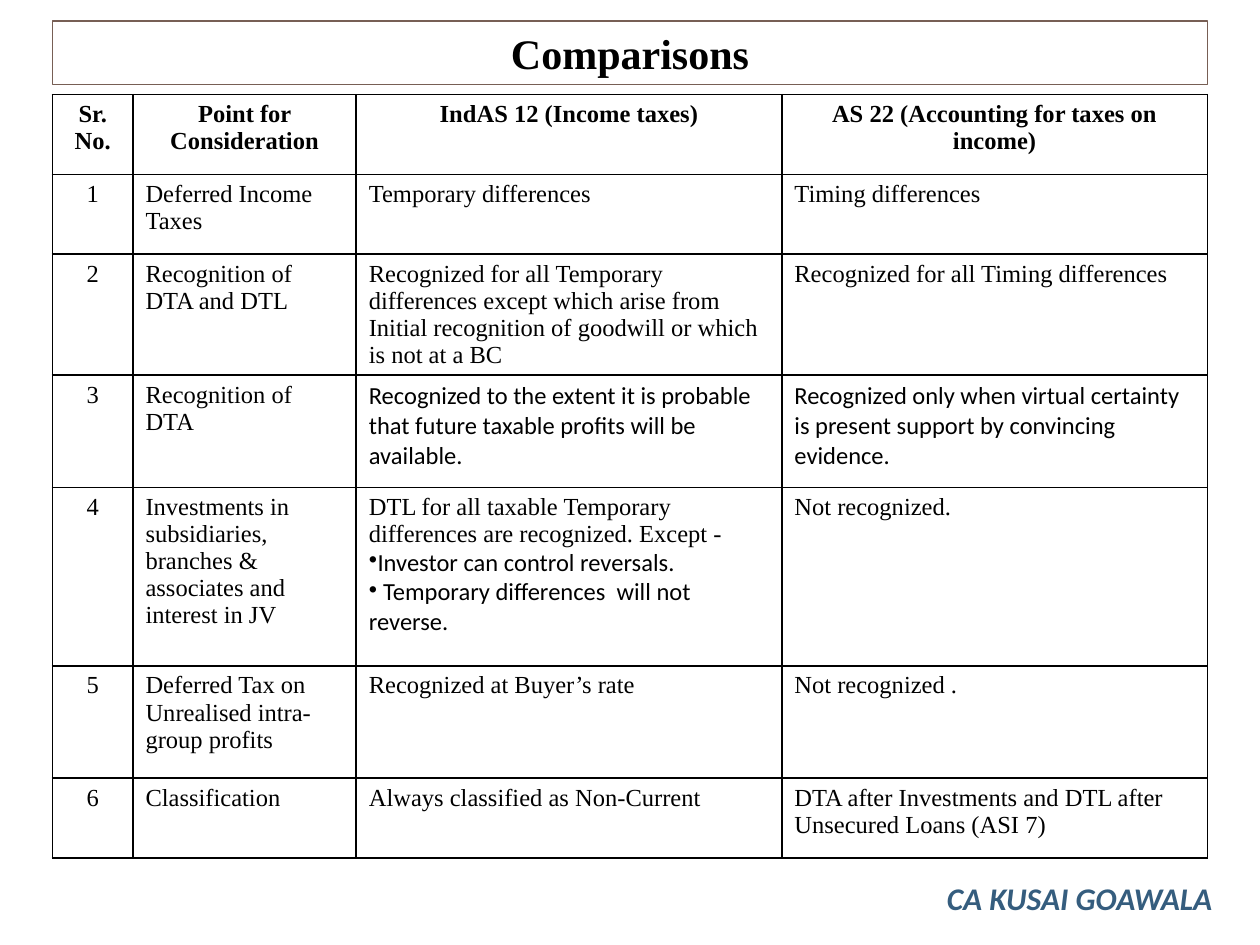
from lxml import etree
from pptx import Presentation
from pptx.dml.color import RGBColor
from pptx.enum.shapes import MSO_SHAPE
from pptx.enum.text import MSO_ANCHOR, MSO_AUTO_SIZE, PP_ALIGN
from pptx.oxml.ns import qn
from pptx.util import Pt

RECTANGLE = MSO_SHAPE.RECTANGLE
LEFT, CENTER = PP_ALIGN.LEFT, PP_ALIGN.CENTER
MIDDLE = MSO_ANCHOR.MIDDLE
GROW = MSO_AUTO_SIZE.SHAPE_TO_FIT_TEXT

COLORS = {"ink": "000000", "frame": "775F55", "author": "355D7E"}
SERIF, SANS = "Times New Roman", "Calibri"
BULLET = "•"

COLUMN_WIDTHS = [46, 127.6, 243.2, 243.2]
ROW_HEIGHTS = [45.6, 45.6, 64.2, 64.2, 102, 64.2, 45.6]
HEADINGS = ["Sr. No.", "Point for Consideration", "IndAS 12 (Income taxes)",
            "AS 22 (Accounting for taxes on income)"]
COMPARISONS = [
    ("Deferred Income Taxes", "Temporary differences", "Timing differences"),
    ("Recognition of DTA and DTL",
     "Recognized for all Temporary differences except which arise from "
     "Initial recognition of goodwill or which is not at a BC",
     "Recognized for all Timing differences"),
    ("Recognition of DTA",
     "Recognized to the extent it is probable that future taxable profits will be available.",
     "Recognized only when virtual certainty is present support by convincing evidence."),
    ("Investments in subsidiaries, branches & associates and interest in JV",
     "DTL for all taxable Temporary differences are recognized. Except -\n"
     "•Investor can control reversals.\n"
     "• Temporary differences  will not reverse.",
     "Not recognized."),
    ("Deferred Tax on Unrealised intra-group profits", "Recognized at Buyer’s rate",
     "Not recognized ."),
    ("Classification", "Always classified as Non-Current",
     "DTA after Investments and DTL after Unsecured Loans (ASI 7)"),
]
SANS_CELLS = {(3, 2), (3, 3)}


def write_text(frame, text, size=14, font=SERIF, color="ink", bold=False,
               italic=False, align=LEFT):
    frame.word_wrap = True
    for index, line in enumerate(text.split("\n")):
        paragraph = frame.add_paragraph() if index else frame.paragraphs[0]
        paragraph.alignment = align
        bulleted = line.startswith(BULLET)
        if bulleted:
            properties = paragraph._p.get_or_add_pPr()
            etree.SubElement(properties, qn("a:buChar"), char=BULLET)
        run = paragraph.add_run()
        run.text = line.removeprefix(BULLET)
        run.font.name = SANS if bulleted else font
        run.font.size = Pt(size)
        run.font.bold = bold
        run.font.italic = italic
        run.font.color.rgb = RGBColor.from_string(COLORS[color])


def draw_borders(cell, color="ink", width=1):
    properties = cell._tc.get_or_add_tcPr()
    for position, side in enumerate(("a:lnL", "a:lnR", "a:lnT", "a:lnB")):
        border = etree.Element(qn(side), w=str(Pt(width)))
        fill = etree.SubElement(border, qn("a:solidFill"))
        etree.SubElement(fill, qn("a:srgbClr"), val=COLORS[color])
        properties.insert(position, border)


def add_title(slide, left, top, width, height):
    title = slide.shapes.add_shape(RECTANGLE, Pt(left), Pt(top), Pt(width), Pt(height))
    title.shadow.inherit = False
    title.fill.background()
    title.line.color.rgb = RGBColor.from_string(COLORS["frame"])
    title.line.width = Pt(0.75)
    title.text_frame.vertical_anchor = MIDDLE
    title.text_frame.auto_size = GROW
    write_text(title.text_frame, "Comparisons", size=24, bold=True, align=CENTER)


def add_comparison_table(slide, left, top, width, height):
    rows = [HEADINGS] + [(str(number), *points)
                         for number, points in enumerate(COMPARISONS, 1)]
    table = slide.shapes.add_table(len(rows), len(HEADINGS), Pt(left), Pt(top),
                                   Pt(width), Pt(height)).table
    table.first_row = table.horz_banding = False
    for column, share in zip(table.columns, COLUMN_WIDTHS):
        column.width = Pt(width * share / sum(COLUMN_WIDTHS))
    for row, row_height in zip(table.rows, ROW_HEIGHTS):
        row.height = Pt(row_height)
    for r, texts in enumerate(rows):
        for c, text in enumerate(texts):
            cell = table.cell(r, c)
            cell.fill.background()
            draw_borders(cell)
            write_text(cell.text_frame, text, bold=r == 0,
                       font=SANS if (r, c) in SANS_CELLS else SERIF,
                       align=CENTER if r == 0 or c == 0 else LEFT)


def add_author(slide, left, top, width, height):
    author = slide.shapes.add_textbox(Pt(left), Pt(top), Pt(width), Pt(height))
    author.text_frame.auto_size = GROW
    write_text(author.text_frame, "CA KUSAI GOAWALA", size=18, font=SANS,
               color="author", bold=True, italic=True)


def main():
    deck = Presentation()
    deck.slide_width, deck.slide_height = Pt(720), Pt(540)
    slide = deck.slides.add_slide(deck.slide_layouts[6])
    margin = 30
    content_width = 720 - 2 * margin
    add_comparison_table(slide, margin, 54, content_width, sum(ROW_HEIGHTS))
    add_title(slide, margin, 12, content_width, 36.5)
    add_author(slide, 534, 498.5, 186, 29)
    deck.save("out.pptx")


if __name__ == "__main__":
    main()
